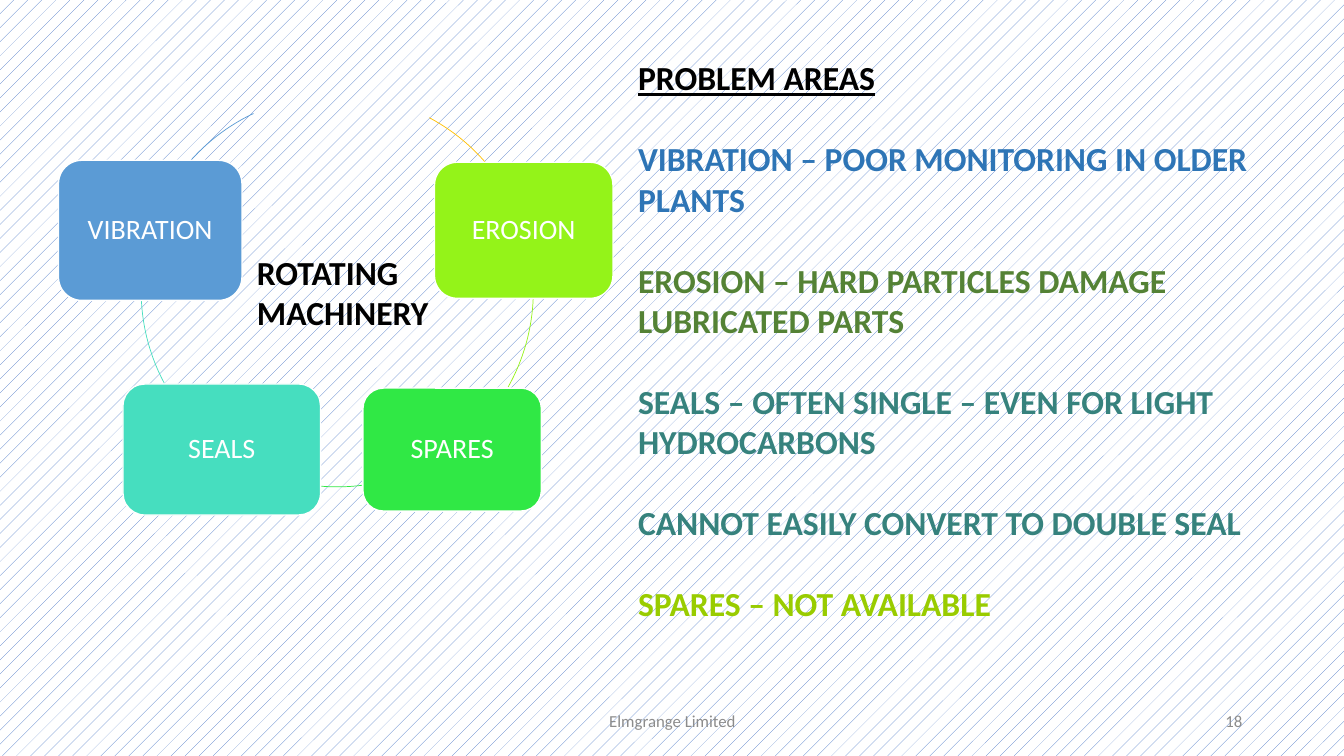
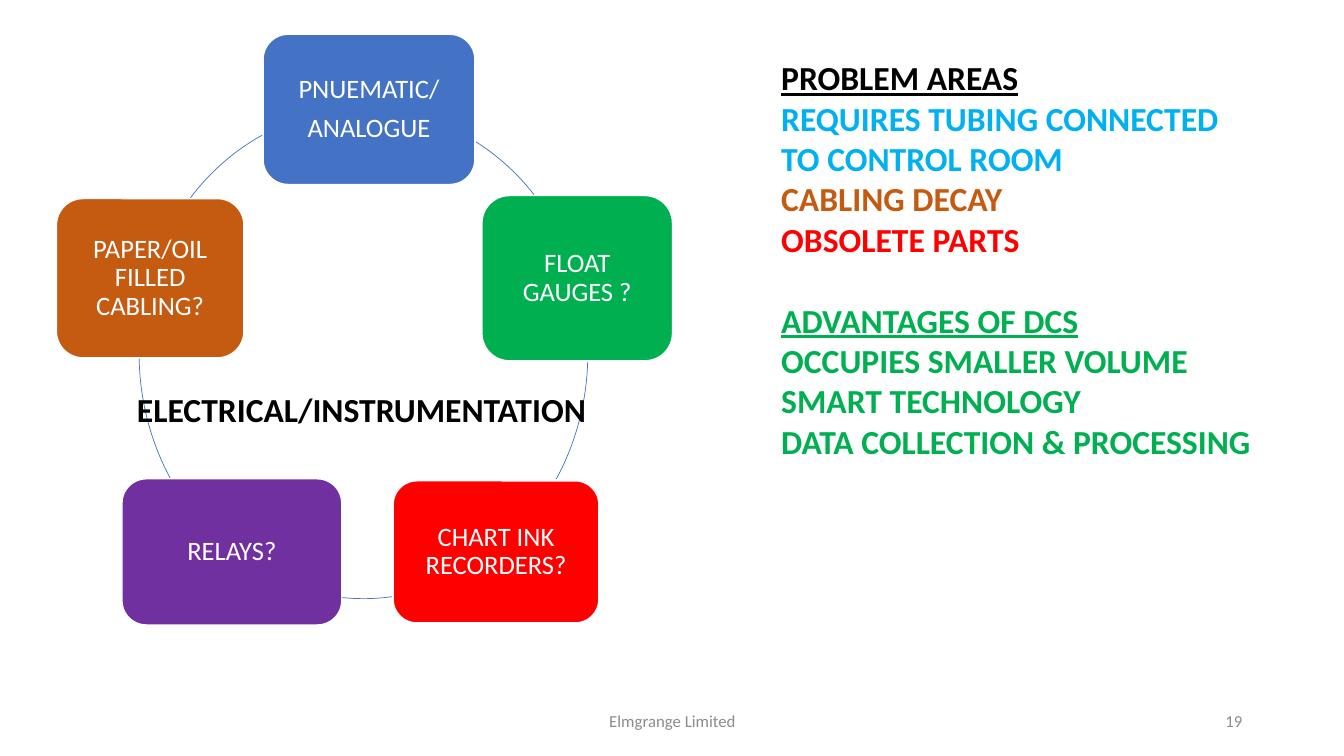
from pptx import Presentation
from pptx.dml.color import RGBColor
from pptx.enum.dml import MSO_PATTERN_TYPE as Pattern
from pptx.enum.shapes import MSO_SHAPE as Shape
from pptx.enum.text import MSO_ANCHOR as Anchor, PP_ALIGN as Align
from pptx.util import Inches, Pt

# Colours
BLACK = RGBColor(0x00, 0x00, 0x00)
WHITE = RGBColor(0xFF, 0xFF, 0xFF)
GREY = RGBColor(0x8C, 0x8C, 0x8C)
BLUE = RGBColor(0x44, 0x72, 0xC4)
LIGHT_BLUE = RGBColor(0x5B, 0x9B, 0xD5)
DARK_BLUE = RGBColor(0x2E, 0x75, 0xB6)
SKY = RGBColor(0x00, 0xB0, 0xF0)
GOLD = RGBColor(0xFF, 0xC0, 0x00)
BROWN = RGBColor(0xC5, 0x5A, 0x11)
RED = RGBColor(0xFF, 0x00, 0x00)
PURPLE = RGBColor(0x70, 0x30, 0xA0)
LIME = RGBColor(0x94, 0xF3, 0x19)
OLIVE = RGBColor(0x99, 0xCC, 0x00)
BRIGHT_GREEN = RGBColor(0x30, 0xE8, 0x45)
GREEN = RGBColor(0x00, 0xB0, 0x50)
DARK_GREEN = RGBColor(0x54, 0x82, 0x35)
AQUA = RGBColor(0x46, 0xDE, 0xBF)
TEAL = RGBColor(0x36, 0x82, 0x7D)

# Text styles
FOOTER = {"size": Pt(12)}
HEADING = {"size": Pt(24), "bold": True}
UNDERLINED = HEADING | {"underline": True}
BODY = {"anchor": Anchor.TOP}
LABEL = {"alignment": Align.CENTER, "line_spacing": 0.9}
BLANK_LINE = Pt(29)

# Slide contents: arcs are (start, end, colour) in degrees clockwise from the right;
# boxes are (left, top, width, height, fill, lines);
# notes are (text, colour, font, space before)
SLIDES = [
    {
        "number": "18", "patterned": True,
        "ring": (1.4, 0.94, 3.89, 3.89),
        "arcs": [(298, 319, GOLD), (2, 29.4, LIME), (82.5, 95, BRIGHT_GREEN),
                 (152, 177.2, AQUA), (222, 244.7, LIGHT_BLUE)],
        "label_size": 20,
        "boxes": [
            (4.31, 1.61, 1.77, 1.35, LIME, ["EROSION"]),
            (3.6, 3.85, 1.77, 1.22, BRIGHT_GREEN, ["SPARES"]),
            (1.22, 3.81, 1.96, 1.3, AQUA, ["SEALS"]),
            (0.58, 1.59, 1.82, 1.39, LIGHT_BLUE, ["VIBRATION"]),
        ],
        "title": ("ROTATING MACHINERY", (2.45, 2.45, 1.96, 0.91)),
        "notes_at": (6.23, 0.52, 6.98, 6.09),
        "notes": [
            ("PROBLEM AREAS", BLACK, UNDERLINED, 0),
            ("VIBRATION – POOR MONITORING IN OLDER PLANTS", DARK_BLUE, HEADING, BLANK_LINE),
            ("EROSION – HARD PARTICLES DAMAGE LUBRICATED PARTS", DARK_GREEN, HEADING, BLANK_LINE),
            ("SEALS – OFTEN SINGLE – EVEN FOR LIGHT HYDROCARBONS", TEAL, HEADING, BLANK_LINE),
            ("CANNOT EASILY CONVERT TO DOUBLE SEAL", TEAL, HEADING, BLANK_LINE),
            ("SPARES – NOT AVAILABLE", OLIVE, HEADING, BLANK_LINE),
        ],
    },
    {
        "number": "19", "patterned": False,
        "ring": (1.38, 1.08, 4.45, 4.86),
        "arcs": [(298, 317, BLUE), (2, 33, BLUE), (83.3, 95, BLUE),
                 (147.3, 179, BLUE), (222, 245.2, BLUE)],
        "label_size": 19,
        "boxes": [
            (2.61, 0.34, 2.1, 1.49, BLUE, ["PNUEMATIC/", "ANALOGUE"]),
            (4.78, 1.94, 1.89, 1.64, GREEN, ["FLOAT GAUGES ?"]),
            (3.9, 4.77, 2.04, 1.41, RED, ["CHART INK RECORDERS?"]),
            (1.21, 4.75, 2.18, 1.45, PURPLE, ["RELAYS?"]),
            (0.56, 1.97, 1.86, 1.58, BROWN, ["PAPER/OIL FILLED CABLING?"]),
        ],
        "title": ("ELECTRICAL/INSTRUMENTATION", (1.26, 3.81, 4.8, 0.5)),
        "notes_at": (7.65, 0.52, 5.56, 5.28),
        "notes": [
            ("PROBLEM AREAS", BLACK, UNDERLINED, 0),
            ("REQUIRES TUBING CONNECTED", SKY, HEADING, 0),
            ("TO CONTROL ROOM", SKY, HEADING, 0),
            ("CABLING DECAY", BROWN, HEADING, 0),
            ("OBSOLETE PARTS", RED, HEADING, 0),
            ("ADVANTAGES OF DCS", GREEN, UNDERLINED, BLANK_LINE),
            ("OCCUPIES SMALLER VOLUME", GREEN, HEADING, 0),
            ("SMART TECHNOLOGY", GREEN, HEADING, 0),
            ("DATA COLLECTION & PROCESSING", GREEN, HEADING, 0),
        ],
    },
]


def write(box, lines, anchor=Anchor.TOP, **layout):
    """Fill a box with (text, colour, font, space before) lines."""
    frame = box.text_frame
    frame.word_wrap = True
    frame.vertical_anchor = anchor
    for index, (text, colour, font, space) in enumerate(lines):
        para = frame.add_paragraph() if index else frame.paragraphs[0]
        for name, value in layout.items():
            setattr(para, name, value)
        if space:
            para.space_before = space
        span = para.add_run()
        span.text = text
        for name, value in ({"name": "Calibri"} | font).items():
            setattr(span.font, name, value)
        span.font.color.rgb = colour


def add_text(page, place, lines, **layout):
    box = page.shapes.add_textbox(*map(Inches, place))
    write(box, lines, **layout)


deck = Presentation()
deck.slide_width, deck.slide_height = Inches(13.33), Inches(7.5)

for content in SLIDES:
    page = deck.slides.add_slide(deck.slide_layouts[6])

    # Background
    fill = page.background.fill
    if content["patterned"]:
        fill.patterned()
        fill.pattern = Pattern.PERCENT_5
        fill.fore_color.rgb, fill.back_color.rgb = BLUE, WHITE
    else:
        fill.solid()
        fill.fore_color.rgb = WHITE

    # Ring of arcs; an arc adjustment of 0.6 is one degree
    for start, end, colour in content["arcs"]:
        arc = page.shapes.add_shape(Shape.ARC, *map(Inches, content["ring"]))
        arc.shadow.inherit = False
        arc.adjustments[0], arc.adjustments[1] = start * 0.6, end * 0.6
        arc.fill.background()
        arc.line.color.rgb = colour
        arc.line.width = Pt(0.5)

    # Boxes on the ring
    label_font = {"size": Pt(content["label_size"])}
    for *place, colour, lines in content["boxes"]:
        box = page.shapes.add_shape(Shape.ROUNDED_RECTANGLE, *map(Inches, place))
        box.shadow.inherit = False
        box.fill.solid()
        box.fill.fore_color.rgb = colour
        box.line.color.rgb = WHITE
        box.line.width = Pt(1)
        for side in ("left", "top", "right", "bottom"):
            setattr(box.text_frame, f"margin_{side}", Inches(0.08))
        write(box, [(line, WHITE, label_font, Pt(6.65) if index else 0)
                    for index, line in enumerate(lines)], Anchor.MIDDLE, **LABEL)

    # Notes and ring title
    add_text(page, content["notes_at"], content["notes"], **BODY)
    title, place = content["title"]
    add_text(page, place, [(title, BLACK, HEADING, 0)], **BODY)

    # Footer and slide number
    for text, left, width, alignment in [("Elmgrange Limited", 4.42, 4.5, Align.CENTER),
                                         (content["number"], 9.42, 3, Align.RIGHT)]:
        add_text(page, (left, 6.95, width, 0.4), [(text, GREY, FOOTER, 0)],
                 anchor=Anchor.MIDDLE, alignment=alignment)

deck.save("out.pptx")
